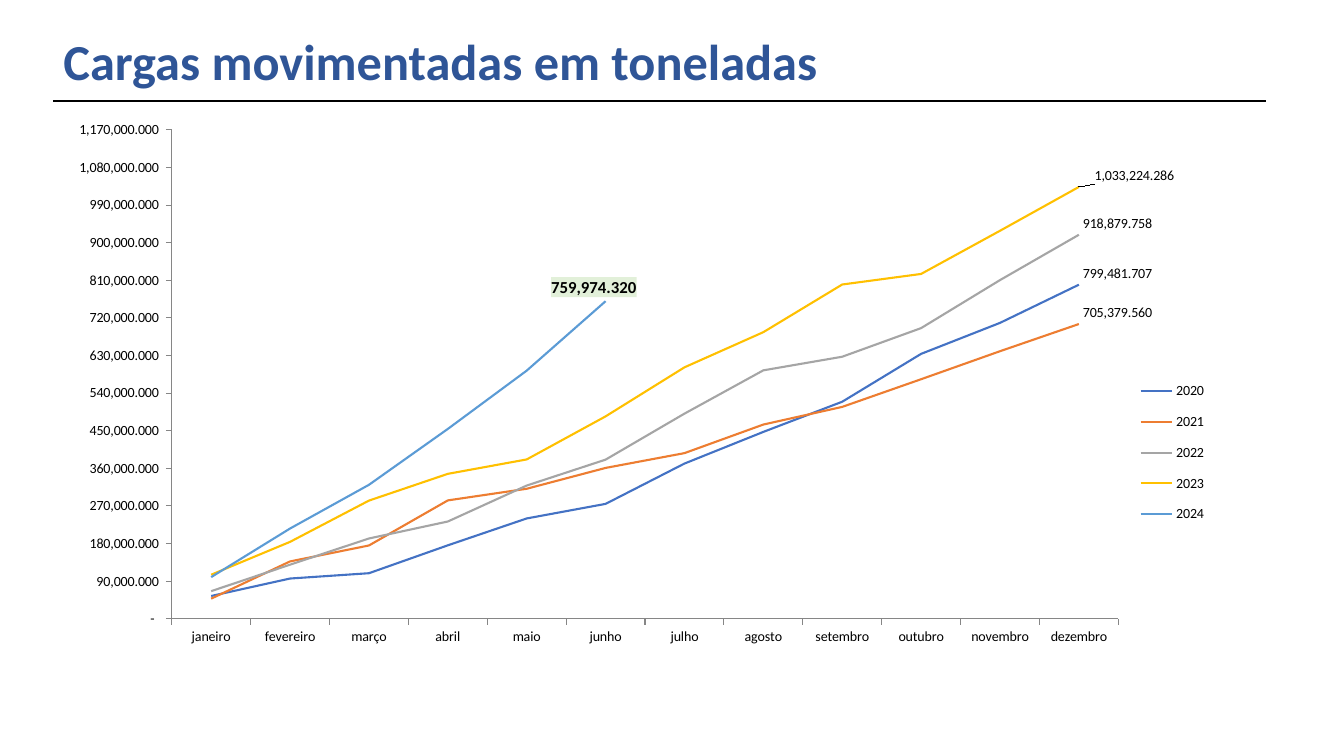
"""Build a slide with a line chart of cumulative cargo by month and year."""
from lxml.etree import SubElement
from pptx import Presentation
from pptx.chart.data import CategoryChartData
from pptx.dml.color import RGBColor
from pptx.enum.chart import XL_CHART_TYPE, XL_LABEL_POSITION, XL_LEGEND_POSITION, XL_MARKER_STYLE, XL_TICK_MARK
from pptx.enum.shapes import MSO_CONNECTOR
from pptx.enum.text import MSO_ANCHOR
from pptx.oxml import parse_xml
from pptx.oxml.ns import nsdecls, qn
from pptx.util import Inches, Pt


def color(value):
    return RGBColor.from_string(value)


def add_text(page, text, *, left, top, width, height, size, fill, bold=False, spacing=1.0):
    box = page.shapes.add_textbox(Inches(left), Inches(top), Inches(width), Inches(height))
    frame = box.text_frame
    frame.word_wrap = True
    frame.vertical_anchor = MSO_ANCHOR.MIDDLE
    para = frame.paragraphs[0]
    para.line_spacing = spacing
    span = para.add_run()
    span.text = text
    span.font.name = "Calibri"
    span.font.size = Pt(size)
    span.font.bold = bold
    span.font.color.rgb = color(fill)


months = ["janeiro", "fevereiro", "março", "abril", "maio", "junho",
          "julho", "agosto", "setembro", "outubro", "novembro", "dezembro"]
cargo = {
    "2020": [54749.441, 96453.605, 109259.676, 175964.233, 240226.541, 275084.718,
             371502.118, 447234.363, 519388.373, 633939.606, 708122.73, 799481.707],
    "2021": [48347.115, 137451.384, 175584.099, 283434.428, 311227.829, 361077.246,
             396494.341, 464844.629, 507037.495, 573355.94, 640332.962, 705379.56],
    "2022": [66335.68, 129581.37, 192320.983, 232863.597, 318905.391, 380857.659,
             490951.686, 594612.927, 627185.907, 695559.783, 810479.869, 918879.758],
    "2023": [105573.344, 184185.282, 282908.025, 346915.956, 381401.141, 484379.167,
             601818.875, 685923.364, 799923.45, 825163.269, 928464.001, 1033224.286],
    "2024": [99919.549, 216142.577, 320744.972, 454368.019, 593892.13, 759974.32],
}
year_colors = ["4472C4", "ED7D31", "A5A5A5", "FFC000", "5B9BD5"]
label_offsets = [(0, -0.02), (0, -0.02), (0, -0.02), (0.01, -0.02), (-0.01, 0)]

deck = Presentation()
deck.slide_width = Inches(13.33)
deck.slide_height = Inches(7.5)
page = deck.slides.add_slide(deck.slide_layouts[6])

rule = page.shapes.add_connector(MSO_CONNECTOR.STRAIGHT, Inches(0.53), Inches(1), Inches(12.56), Inches(1))
rule.line.color.rgb = color("000000")
rule.line.width = Pt(1.5)
SubElement(rule.element.spPr, qn("a:effectLst"))

add_text(page, "Cargas movimentadas em toneladas", left=0.53, top=0.29, width=10.21, height=0.7,
         size=36, fill="2F5597", bold=True, spacing=0.9)

chart_data = CategoryChartData(number_format="#,##0.000")
chart_data.categories = months
for year, tons in cargo.items():
    chart_data.add_series(year, tons + [None] * (len(months) - len(tons)))
chart = page.shapes.add_chart(XL_CHART_TYPE.LINE, Inches(0.53), Inches(1.11),
                              Inches(11.62), Inches(5.41), chart_data).chart
chart.has_title = False
chart.font.name = "Calibri"
chart.font.size = Pt(10)
chart.font.color.rgb = color("000000")
chart.has_legend = True
chart.legend.position = XL_LEGEND_POSITION.RIGHT
chart.legend.include_in_layout = False

for axis in (chart.category_axis, chart.value_axis):
    axis.has_major_gridlines = False
    axis.major_tick_mark = XL_TICK_MARK.OUTSIDE
    axis.minor_tick_mark = XL_TICK_MARK.NONE
    axis.format.line.color.rgb = color("868686")
    axis.format.line.width = Pt(0.75)
tons_axis = chart.value_axis
tons_axis.minimum_scale = 0
tons_axis.maximum_scale = 1170000
tons_axis.major_unit = 90000
tons_axis.tick_labels.number_format = '_-* #,##0.000_-;\\-* #,##0.000_-;_-* "-"?'
tons_axis.tick_labels.number_format_is_linked = False

plot = chart.plots[0]
plot.vary_by_categories = False
for series, fill, (shift_x, shift_y) in zip(plot.series, year_colors, label_offsets):
    series.smooth = False
    series.marker.style = XL_MARKER_STYLE.NONE
    series.format.line.color.rgb = color(fill)
    series.format.line.width = Pt(1.5)
    series.data_labels.show_value = False
    highlighted = series.name == "2024"
    last = len(cargo[series.name]) - 1
    label = series.points[last].data_label
    label.font.size = Pt(12 if highlighted else 10)
    label.font.bold = highlighted
    label.font.color.rgb = color("000000")
    label.position = XL_LABEL_POSITION.ABOVE if highlighted else XL_LABEL_POSITION.RIGHT
    node = series.data_labels._element.find(qn("c:dLbl"))
    node.insert(1, parse_xml(
        f'<c:layout {nsdecls("c")}><c:manualLayout><c:x val="{shift_x}"/>'
        f'<c:y val="{shift_y}"/></c:manualLayout></c:layout>'))
    if highlighted:
        node.find(qn("c:txPr")).addprevious(parse_xml(
            f'<c:spPr {nsdecls("c", "a")}><a:solidFill><a:srgbClr val="E2F0D9"/></a:solidFill></c:spPr>'))

plot_area = chart.element.chart.plotArea
legend = chart.legend._element
layouts = [(plot_area, '<c:layoutTarget val="inner"/>', (0.101, 0.033, 0.808, 0.897)),
           (legend, "", (0.915, 0.47, 0.08, 0.31))]
for area, target, (left, top, width, height) in layouts:
    for old in area.findall(qn("c:layout")):
        area.remove(old)
    layout = parse_xml(
        f'<c:layout {nsdecls("c")}><c:manualLayout>{target}'
        f'<c:xMode val="edge"/><c:yMode val="edge"/><c:x val="{left}"/><c:y val="{top}"/>'
        f'<c:w val="{width}"/><c:h val="{height}"/></c:manualLayout></c:layout>')
    area.insert(0 if area is plot_area else 1, layout)

deck.save("out.pptx")
